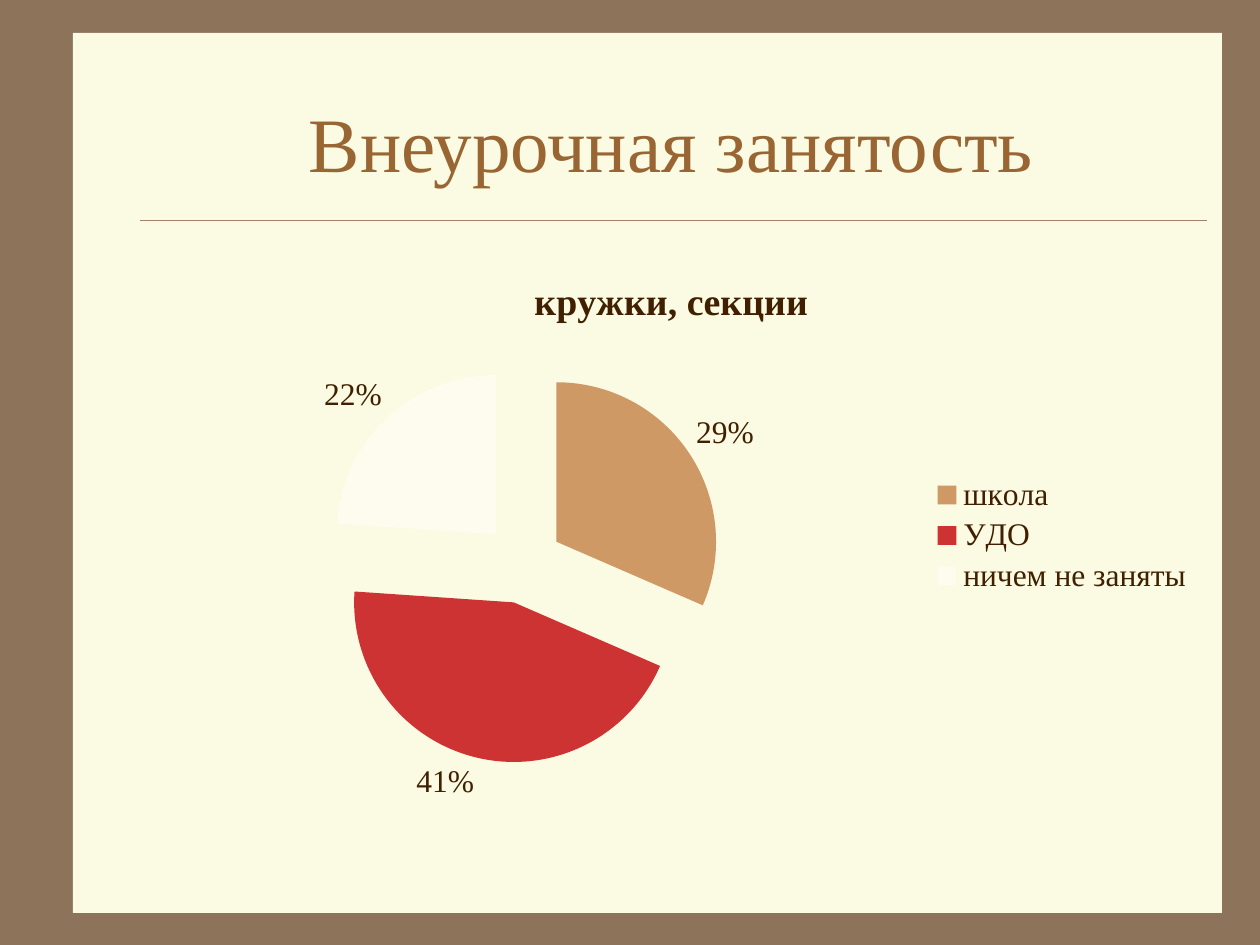
from dataclasses import dataclass
from lxml import etree
from pptx import Presentation
from pptx.chart.data import CategoryChartData as ChartData
from pptx.dml.color import RGBColor as Rgb
from pptx.enum.chart import XL_CHART_TYPE as Kind
from pptx.enum.chart import XL_LABEL_POSITION as LabelPos
from pptx.enum.chart import XL_LEGEND_POSITION as LegendPos
from pptx.enum.shapes import MSO_CONNECTOR as Conn
from pptx.enum.shapes import MSO_SHAPE as Shape
from pptx.enum.text import MSO_ANCHOR as Anchor
from pptx.enum.text import PP_ALIGN as Align
from pptx.oxml.ns import qn
from pptx.util import Emu, Pt


@dataclass(frozen=True)
class Theme:
    font: str = "Times New Roman"
    frame: str = "8C735A"
    page: str = "FBFAE2"
    rule: str = "A08366"
    title: str = "996633"
    ink: str = "402000"
    slices: tuple = ("CE9964", "CD3333", "FDFCEE")
    title_size: float = 44
    head_size: float = 21.6
    body_size: float = 18
    rule_width: float = 0.25


THEME = Theme()


def px(n):
    return Emu(round(n * 914400 / 126))


def paint(fill, color):
    fill.solid()
    fill.fore_color.rgb = Rgb.from_string(color)


def style(font, size, color, bold=False):
    font.name = THEME.font
    font.size = Pt(size)
    font.bold = bold
    font.color.rgb = Rgb.from_string(color)


def add_text(slide, text, box, *, size, color, bold=False,
             align=Align.CENTER, anchor=Anchor.MIDDLE):
    frame = slide.shapes.add_textbox(*map(px, box)).text_frame
    frame.word_wrap = True
    frame.vertical_anchor = anchor
    para = frame.paragraphs[0]
    para.alignment = align
    run = para.add_run()
    run.text = text
    style(run.font, size, color, bold)


def add_panel(slide, box, color):
    panel = slide.shapes.add_shape(Shape.RECTANGLE, *map(px, box))
    panel.shadow.inherit = False
    paint(panel.fill, color)
    panel.line.fill.background()


def add_rule(slide, left, right, y):
    rule = slide.shapes.add_connector(
        Conn.STRAIGHT, px(left), px(y), px(right), px(y))
    rule.line.color.rgb = Rgb.from_string(THEME.rule)
    rule.line.width = Pt(THEME.rule_width)
    etree.SubElement(rule.element.spPr, qn("a:effectLst"))


def explode(series, amount):
    node = etree.Element(qn("c:explosion"), val=str(amount))
    series._element.find(qn("c:tx")).addnext(node)


def add_pie(slide, name, parts, box):
    data = ChartData(number_format="0%")
    data.categories = list(parts)
    data.add_series(name, list(parts.values()))
    chart = slide.shapes.add_chart(Kind.PIE, *map(px, box), data).chart
    style(chart.font, THEME.body_size, THEME.ink)

    # Heading and legend
    chart.has_title = True
    head = chart.chart_title.text_frame
    head.text = name
    style(head.paragraphs[0].runs[0].font, THEME.head_size, THEME.ink, True)
    chart.has_legend = True
    chart.legend.position = LegendPos.RIGHT
    chart.legend.include_in_layout = False

    # Slices
    plot = chart.plots[0]
    plot.vary_by_categories = True
    series = plot.series[0]
    explode(series, 25)
    for i, color in enumerate(THEME.slices):
        form = series.points[i].format
        paint(form.fill, color)
        form.line.fill.background()

    # Values
    labels = series.data_labels
    labels.show_value = True
    labels.number_format = "0%"
    labels.number_format_is_linked = False
    labels.position = LabelPos.OUTSIDE_END
    style(labels.font, THEME.body_size, THEME.ink)


def main():
    deck = Presentation()
    deck.slide_width, deck.slide_height = px(1260), px(945)
    slide = deck.slides.add_slide(deck.slide_layouts[6])

    # Page on its frame
    paint(slide.background.fill, THEME.frame)
    add_panel(slide, (73, 33, 1149, 880), THEME.page)

    # Title over a rule
    add_rule(slide, 140, 1207, 220)
    add_text(slide, "Внеурочная занятость", (136, 63, 1071, 157),
             size=THEME.title_size, color=THEME.title)

    # Chart
    parts = {"школа": 0.29, "УДО": 0.41, "ничем не заняты": 0.22}
    add_pie(slide, "кружки, секции", parts, (136, 252, 1071, 567))

    deck.save("out.pptx")


if __name__ == "__main__":
    main()
